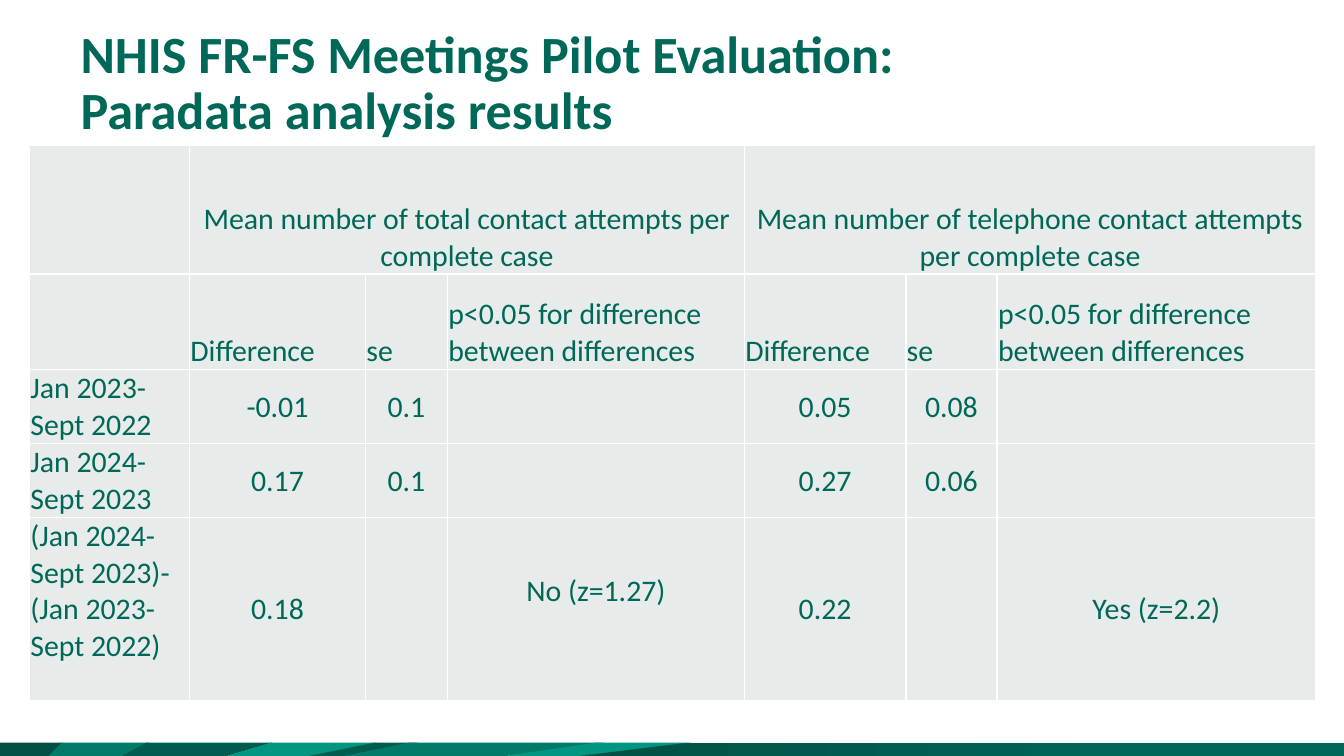
from pptx import Presentation, util as u
from pptx.dml.color import RGBColor
from pptx.enum import text
from pptx.oxml import parse_xml
from pptx.oxml.ns import nsdecls

WIDTH = 10
HEIGHT = WIDTH * 9 / 16
FONT, GREEN, GREY, WHITE = "Calibri", "006858", "E7EBEA", "FFFFFF"
DARK, DEEP, MID, BRIGHT = "005045", "005C4F", "007A69", "009681"

# Footer facets: top left, top right, bottom left, bottom right, colour
FACETS = [
    (0, 0.47, 0, 0.39, DARK),
    (0.46, 1.11, 0.36, 0.92, MID),
    (1.09, 2.03, 0.91, 1.69, DEEP),
    (2.02, 2.8, 1.69, 2.34, BRIGHT),
    (2.79, 3.11, 2.3, 2.57, DEEP),
    (3.05, 4.5, 2.56, 3.77, MID),
    (4.44, 5.15, 3.76, 4.35, BRIGHT),
    (5.14, WIDTH, 4.31, WIDTH, DARK),
]
COLUMNS = [1.19, 1.31, 0.61, 2.21, 1.2, 0.68, 2.37]
ROWS = [0.96, 0.71, 0.43, 0.43, 0.8]  # the lower rows grow with their text
MEASURES = ["Difference", "se", "p<0.05 for difference between differences"]
CELLS = [
    ["", "Mean number of total contact attempts per complete case", "", "",
     "Mean number of telephone contact attempts per complete case", "", ""],
    ["", *MEASURES, *MEASURES],
    ["Jan 2023-Sept 2022", "-0.01", "0.1", "", "0.05", "0.08", ""],
    ["Jan 2024- Sept 2023", "0.17", "0.1", "", "0.27", "0.06", ""],
    ["(Jan 2024-Sept 2023)-(Jan 2023-Sept 2022)",
     "0.18", "", "No (z=1.27)", "0.22", "", "Yes (z=2.2)"],
]
RAISED = {(4, 0), (4, 3)}  # cells with a line of space under their text


def colour(value):
    return RGBColor.from_string(value)


def set_font(font, size, bold=False):
    font.name, font.size, font.bold = FONT, u.Pt(size), bold
    font.color.rgb = colour(GREEN)


def add_footer(slide, top, height):
    bottom = top + height
    for top_left, top_right, low_left, low_right, shade in FACETS:
        corners = [(u.Inches(x), u.Inches(y)) for x, y in (
            (top_right, top), (top_left, top),
            (low_left, bottom), (low_right, bottom))]
        builder = slide.shapes.build_freeform(*corners[0])
        builder.add_line_segments(corners[1:], close=True)
        facet = builder.convert_to_shape()
        facet.shadow.inherit = False
        facet.line.fill.background()
        facet.fill.solid()
        facet.fill.fore_color.rgb = colour(shade)
    # The last facet fades along the rest of the slide
    facet.fill.gradient()
    facet.fill.gradient_angle = 0
    for stop, (position, shade) in zip(facet.fill.gradient_stops,
                                       [(0, DARK), (0.78, GREEN)]):
        stop.position = position
        stop.color.rgb = colour(shade)


def add_title(slide, left, top, width, height):
    title = slide.shapes.title
    title.left, title.top, title.width, title.height = map(
        u.Inches, (left, top, width, height))
    frame = title.text_frame
    frame.text = "NHIS FR-FS Meetings Pilot Evaluation:\vParadata analysis results"
    frame.word_wrap = True
    frame.auto_size = text.MSO_AUTO_SIZE.NONE
    frame.vertical_anchor = text.MSO_ANCHOR.BOTTOM
    paragraph = frame.paragraphs[0]
    paragraph.alignment = text.PP_ALIGN.LEFT
    paragraph.line_spacing = u.Pt(30)
    set_font(paragraph.font, 28, bold=True)


def format_cell(cell, row, column):
    heading = row < 2 or column == 0
    cell.text = CELLS[row][column]
    cell.margin_left = cell.margin_right = cell.margin_top = u.Pt(0.5)
    cell.margin_bottom = u.Inches(0.27 if (row, column) in RAISED else 0)
    cell.vertical_anchor = (text.MSO_ANCHOR.BOTTOM if heading
                            else text.MSO_ANCHOR.MIDDLE)
    paragraph = cell.text_frame.paragraphs[0]
    centred = row == 0 or not heading
    paragraph.alignment = text.PP_ALIGN.CENTER if centred else text.PP_ALIGN.LEFT
    set_font(paragraph.font, 16)
    # Borders come before the fill in the cell properties
    properties = cell._tc.get_or_add_tcPr()
    for side in "LRTB":
        properties.append(parse_xml(
            f'<a:ln{side} {nsdecls("a")} w="12700"><a:solidFill>'
            f'<a:srgbClr val="{WHITE}"/></a:solidFill></a:ln{side}>'))
    cell.fill.solid()
    cell.fill.fore_color.rgb = colour(GREY)


def add_results(slide, left, top):
    table = slide.shapes.add_table(
        len(ROWS), len(COLUMNS), u.Inches(left), u.Inches(top),
        u.Inches(sum(COLUMNS)), u.Inches(sum(ROWS))).table
    table.first_row = table.horz_banding = False
    for column, width in zip(table.columns, COLUMNS):
        column.width = u.Inches(width)
    for row, height in zip(table.rows, ROWS):
        row.height = u.Inches(height)
    for row in range(len(ROWS)):
        for column in range(len(COLUMNS)):
            format_cell(table.cell(row, column), row, column)
    for first in (1, 4):
        table.cell(0, first).merge(table.cell(0, first + 2))


def main():
    presentation = Presentation()
    presentation.slide_width = u.Inches(WIDTH)
    presentation.slide_height = u.Inches(HEIGHT)
    slide = presentation.slides.add_slide(presentation.slide_layouts[5])
    add_footer(slide, HEIGHT - 0.1, 0.1)
    add_title(slide, 0.5, 0.15, WIDTH - 1, 0.94)
    add_results(slide, 0.22, 1.08)
    presentation.save("out.pptx")


if __name__ == "__main__":
    main()
